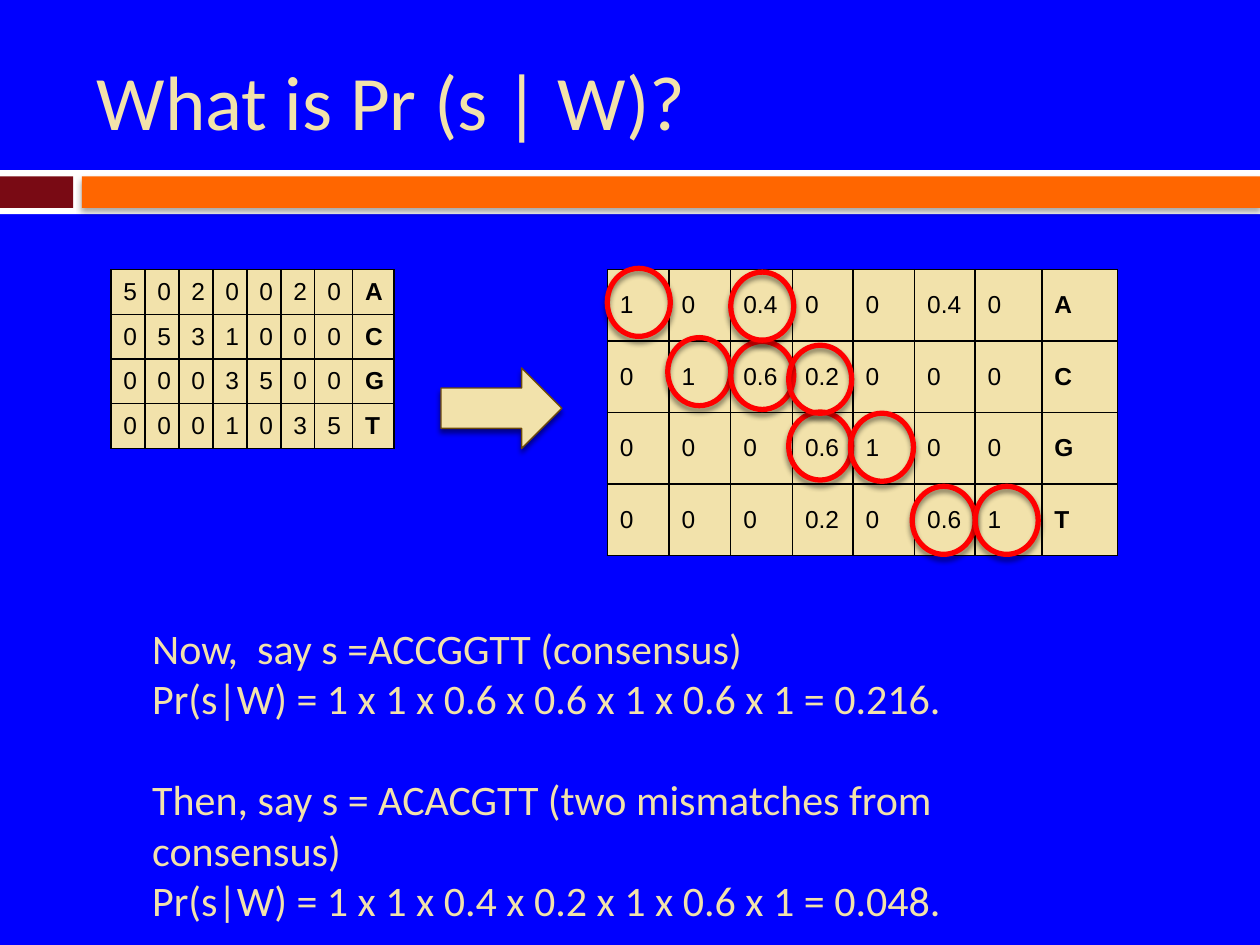
from dataclasses import dataclass

from lxml import etree
from pptx import Presentation
from pptx.dml.color import RGBColor
from pptx.enum.shapes import MSO_SHAPE
from pptx.enum.text import MSO_ANCHOR
from pptx.oxml.ns import qn
from pptx.util import Inches, Pt

RECT, ARROW, OVAL = MSO_SHAPE.RECTANGLE, MSO_SHAPE.RIGHT_ARROW, MSO_SHAPE.OVAL
TOP, MIDDLE = MSO_ANCHOR.TOP, MSO_ANCHOR.MIDDLE


@dataclass(frozen=True)
class Theme:
    background: str = "0000FF"
    cream: str = "F2E2AB"
    white: str = "FFFFFF"
    maroon: str = "790A14"
    orange: str = "FF6600"
    brown: str = "6B4A0B"
    red: str = "FF0000"
    black: str = "000000"
    text_font: str = "Calibri"
    table_font: str = "Arial"
    title_size: int = 44
    body_size: int = 24
    table_size: int = 14


THEME = Theme()
COUNTS = ["5020020", "0531000", "0003500", "0001035"]
WEIGHTS = [
    ["1", "0", "0.4", "0", "0", "0.4", "0"],
    ["0", "1", "0.6", "0.2", "0", "0", "0"],
    ["0", "0", "0", "0.6", "1", "0", "0"],
    ["0", "0", "0", "0.2", "0", "0.6", "1"],
]
BASES = "ACGT"
COUNT_COLS = [0.27] * 6 + [0.3, 0.33]
WEIGHT_COLS = [0.49, 0.49, 0.49, 0.48, 0.49, 0.48, 0.53, 0.6]
RING_LEFTS = [0, 0.48, 0.98, 1.44, 1.93, 2.42, 2.92]
RING_TOPS = [
    {"A": -0.01},
    {"C": 0.54},
    {"C": 0.57, "A": 0.02},
    {"G": 1.13, "C": 0.6},
    {"G": 1.14},
    {"T": 1.72},
    {"T": 1.72},
]
EXAMPLES = [
    ("Now,  say s =ACCGGTT (consensus)", 0),
    ("Pr(s|W) = 1 x 1 x 0.6 x 0.6 x 1 x 0.6 x 1 = 0.216.", 0),
    ("Then, say s = ACACGTT (two mismatches from consensus)", 29),
    ("Pr(s|W) = 1 x 1 x 0.4 x 0.2 x 1 x 0.6 x 1 = 0.048.", 0),
]


def rgb(value):
    return RGBColor.from_string(value)


def set_font(font, color, **values):
    for name, value in values.items():
        setattr(font, name, value)
    font.color.rgb = rgb(color)


def add_shadow(sp, alpha, distance):
    effects = sp._element.spPr.find(qn("a:effectLst"))
    shadow = etree.SubElement(effects, qn("a:outerShdw"), blurRad=str(Pt(3)),
                              dist=str(Pt(distance)), dir="5400000", rotWithShape="0")
    color = etree.SubElement(shadow, qn("a:srgbClr"), val=THEME.black)
    etree.SubElement(color, qn("a:alpha"), val=str(alpha * 1000))


def add_shape(shapes, kind, box, fill=None, line=None, width=1, shadow=None):
    sp = shapes.add_shape(kind, *map(Inches, box))
    sp.shadow.inherit = False
    if fill:
        sp.fill.solid()
        sp.fill.fore_color.rgb = rgb(fill)
    else:
        sp.fill.background()
    if line:
        sp.line.color.rgb = rgb(line)
        sp.line.width = Pt(width)
    else:
        sp.line.fill.background()
    if shadow:
        add_shadow(sp, *shadow)
    return sp


def add_text(s, box, lines, size, anchor):
    tf = s.shapes.add_textbox(*map(Inches, box)).text_frame
    tf.word_wrap = True
    tf.vertical_anchor = anchor
    for i, (text, gap) in enumerate(lines):
        p = tf.paragraphs[0] if i == 0 else tf.add_paragraph()
        if gap:
            p.space_before = Pt(gap)
        r = p.add_run()
        r.text = text
        set_font(r.font, THEME.cream, name=THEME.text_font, size=Pt(size))


def add_header_band(s, box):
    left, top, width, height = box
    bar_top, bar_height, tab, bar_left = top + 0.05, height - 0.1, 0.58, 0.65
    add_shape(s.shapes, RECT, box, THEME.white)
    add_shape(s.shapes, RECT, (left, bar_top, tab, bar_height), THEME.maroon)
    add_shape(s.shapes, RECT, (left + bar_left, bar_top, width - bar_left, bar_height),
              THEME.orange, shadow=(35, 2))


def format_cell(cell, text, bold):
    cell.vertical_anchor = MIDDLE
    tcPr = cell._tc.get_or_add_tcPr()
    for side in ("lnL", "lnR", "lnT", "lnB"):
        border = etree.SubElement(tcPr, qn(f"a:{side}"), w=str(Pt(1)))
        fill = etree.SubElement(border, qn("a:solidFill"))
        etree.SubElement(fill, qn("a:srgbClr"), val=THEME.black)
    cell.fill.solid()
    cell.fill.fore_color.rgb = rgb(THEME.cream)
    r = cell.text_frame.paragraphs[0].add_run()
    r.text = text
    set_font(r.font, THEME.black, name=THEME.table_font,
             size=Pt(THEME.table_size), bold=bold)


def add_matrix(s, box, values, widths):
    table = s.shapes.add_table(len(values), len(widths), *map(Inches, box)).table
    table.first_row = table.horz_banding = False
    for column, width in zip(table.columns, widths):
        column.width = Inches(width)
    for i, row in enumerate(values):
        table.rows[i].height = Inches(box[3] / len(values))
        for j, text in enumerate([*row, BASES[i]]):
            format_cell(table.cell(i, j), text, j == len(row))


def add_rings(s, box):
    left, top = box[:2]
    group = s.shapes.add_group_shape()
    for ring_left, tops in zip(RING_LEFTS, RING_TOPS):
        for ring_top in tops.values():
            add_shape(group.shapes, OVAL, (left + ring_left, top + ring_top, 0.5, 0.54),
                      line=THEME.red, width=3, shadow=(45, 2.4))


def main():
    prs = Presentation()
    prs.slide_width, prs.slide_height = Inches(10), Inches(7.5)
    s = prs.slides.add_slide(prs.slide_layouts[6])
    s.background.fill.solid()
    s.background.fill.fore_color.rgb = rgb(THEME.background)

    weight_box = (4.82, 2.14, 4.05, 2.27)
    add_header_band(s, (0, 1.35, 10, 0.35))
    add_text(s, (0.67, 0.25, 8.92, 1.08), [("What is Pr (s | W)?", 0)],
             THEME.title_size, MIDDLE)
    add_matrix(s, (0.88, 2.14, 2.25, 1.42), COUNTS, COUNT_COLS)
    add_matrix(s, weight_box, WEIGHTS, WEIGHT_COLS)
    add_shape(s.shapes, ARROW, (3.5, 2.92, 0.96, 0.64), THEME.cream,
              THEME.brown, 0.79, (45, 2.4))
    add_text(s, (1.11, 4.89, 7.76, 2.12), EXAMPLES, THEME.body_size, TOP)
    add_rings(s, weight_box)
    prs.save("out.pptx")


if __name__ == "__main__":
    main()
